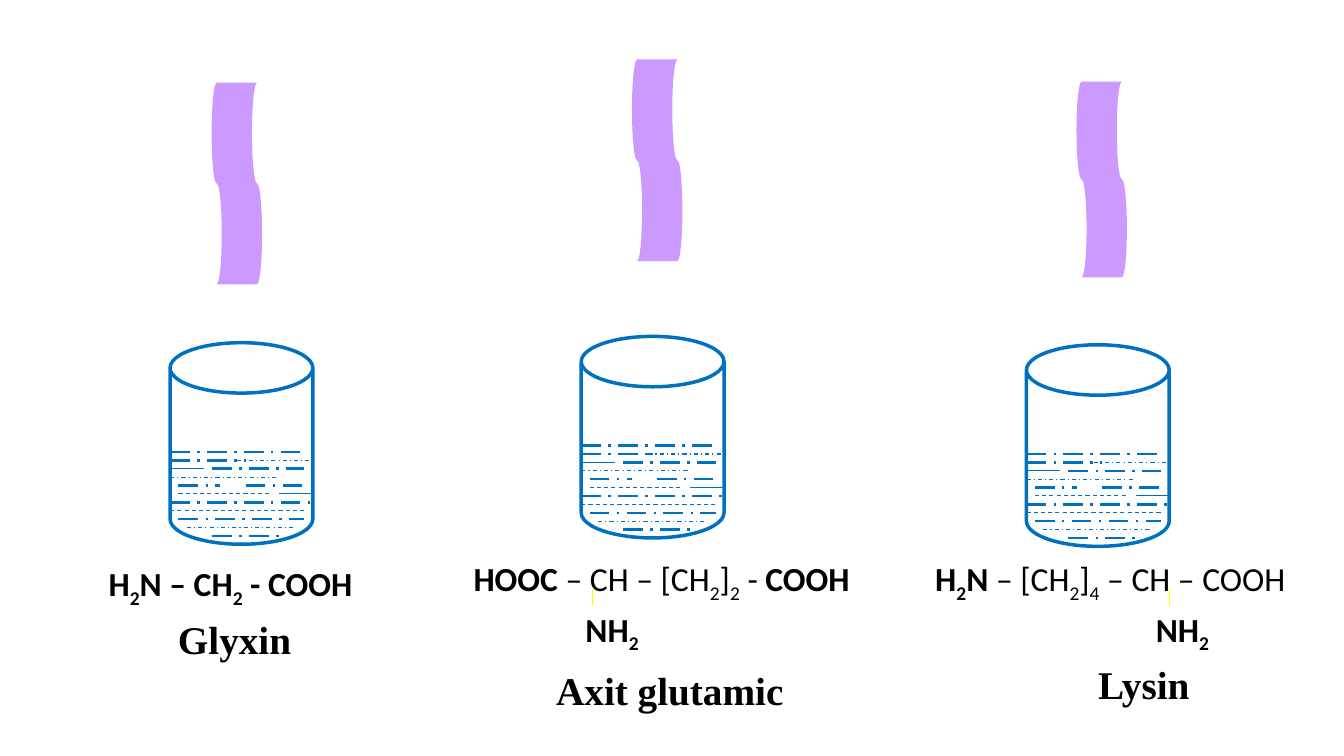
from lxml import etree
from pptx import Presentation
from pptx.dml.color import RGBColor
from pptx.enum.dml import MSO_LINE
from pptx.enum.shapes import MSO_CONNECTOR, MSO_SHAPE
from pptx.enum.text import MSO_ANCHOR, PP_ALIGN
from pptx.oxml.ns import qn
from pptx.util import Emu, Inches, Pt

STRAIGHT = MSO_CONNECTOR.STRAIGHT
CAN, TAPE = MSO_SHAPE.CAN, MSO_SHAPE.FLOWCHART_PUNCHED_TAPE
LONG_DASH_DOT, DASH, DASH_DOT = MSO_LINE.LONG_DASH_DOT, MSO_LINE.DASH, MSO_LINE.DASH_DOT
MIDDLE, CENTER, LEFT = MSO_ANCHOR.MIDDLE, PP_ALIGN.CENTER, PP_ALIGN.LEFT

CELL = Inches(7.5) // 90
SLIDE_COLS, SLIDE_ROWS = 160, 90
BEAKER_COLS, BEAKER_ROWS = 17, 24
TAPE_WIDTH = 6
BLUE, PURPLE, YELLOW, BLACK = "0070C0", "CC99FF", "FFFF00", "000000"
NAME_FONT = {"name": "Times New Roman", "size": Pt(28), "bold": True}
FORMULA_FONT = {"name": "Calibri", "size": Pt(24)}

THICK = (1.75, LONG_DASH_DOT)
THIN, THIN_DASH, THIN_DASH_DOT = (0.75, None), (0.75, DASH), (0.75, DASH_DOT)
LIQUID = {
    THICK: [(13, 0, 16), (14, 0, 9), (15, 5, 16), (17, 1, 6), (17, 9, 16),
            (19, 0, 17), (21, 1, 16), (23, 5, 13)],
    THIN: [(15, 0, 4), (18, 13, 17)],
    THIN_DASH: [(18, 1, 12), (20, 0, 16)],
    THIN_DASH_DOT: [(16, 0, 13), (22, 2, 15), (14, 8, 17)],
}

AMINO = [("NH", True), ("2", True)]
SAMPLES = [
    {
        "tape": (28.2, 21.84, 24),
        "beaker": (20.25, 40.8),
        "formula": (11.76, 66.72, 41),
        "pieces": [("H", True), ("2", True), ("N – CH", True), ("2", True),
                   (" - COOH", True)],
        "branch": None,
        "name": ("Glyxin", 16.92, 72.6, 22),
    },
    {
        "tape": (78.24, 19.08, 24),
        "beaker": (69.2, 40.05),
        "formula": (55.2, 66.12, 48),
        "pieces": [("HOOC", True), (" – CH – [CH", False), ("2", False), ("]", False),
                   ("2", False), (" - ", False), ("COOH", True)],
        "branch": (15.36, 13.32),
        "name": ("Axit glutamic", 63.24, 78.6, 33),
    },
    {
        "tape": (131.16, 21.36, 23.3),
        "beaker": (122.2, 41.05),
        "formula": (110.16, 66.12, 48),
        "pieces": [("H", True), ("2", True), ("N", True), (" – [CH", False),
                   ("2", False), ("]", False), ("4", False), (" – CH – COOH", False)],
        "branch": (29.04, 26.26),
        "name": ("Lysin", 125.16, 77.88, 22),
    },
]


def cells(*counts):
    return [Emu(round(count * CELL)) for count in counts]


def color(hex_code):
    return RGBColor.from_string(hex_code)


def set_font(run, **values):
    for attribute, value in values.items():
        setattr(run.font, attribute, value)
    run.font.color.rgb = color(BLACK)


def add_line(shapes, start, end, hex_code, width, dash=None):
    line = shapes.add_connector(STRAIGHT, *cells(*start, *end))
    line.line.color.rgb = color(hex_code)
    line.line.width = Pt(width)
    if dash:
        line.line.dash_style = dash
    etree.SubElement(line._element.spPr, qn("a:effectLst"))


def add_label(shapes, left, top, width, height, wrap, align):
    label = shapes.add_textbox(*cells(left, top, width, height))
    frame = label.text_frame
    frame.word_wrap = wrap
    frame.vertical_anchor = MIDDLE
    frame.paragraphs[0].alignment = align
    return frame.paragraphs[0]


def add_tape(shapes, center_x, center_y, length):
    tape = shapes.add_shape(TAPE, *cells(center_x - length / 2, center_y - TAPE_WIDTH / 2,
                                         length, TAPE_WIDTH))
    tape.rotation = 270
    tape.shadow.inherit = False
    tape.fill.solid()
    tape.fill.fore_color.rgb = color(PURPLE)
    tape.line.fill.background()


def add_beaker(shapes, left, top):
    beaker = shapes.add_group_shape().shapes
    glass = beaker.add_shape(CAN, *cells(left, top, BEAKER_COLS, BEAKER_ROWS))
    glass.adjustments[0] = 0.353
    glass.shadow.inherit = False
    glass.fill.background()
    glass.line.color.rgb = color(BLUE)
    glass.line.width = Pt(2.5)
    for (width, dash), strokes in LIQUID.items():
        for row, first, last in strokes:
            add_line(beaker, (left + first, top + row), (left + last, top + row),
                     BLUE, width, dash)


def add_formula(shapes, left, top, width, pieces):
    paragraph = add_label(shapes, left, top, width, 6.1, True, LEFT)
    for text, bold in pieces:
        run = paragraph.add_run()
        run.text = text
        set_font(run, **FORMULA_FONT, bold=bold)
        if text.isdigit():
            run._r.get_or_add_rPr().set("baseline", "-25000")


def add_branch(shapes, left, top, bond, amino):
    add_formula(shapes, left + amino, top + 6, 12, AMINO)
    add_line(shapes, (left + bond, top + 4), (left + bond, top + 6), YELLOW, 0.75)


def add_name(shapes, text, left, top, width):
    run = add_label(shapes, left, top, width, 7, False, CENTER).add_run()
    run.text = text
    set_font(run, **NAME_FONT)


def add_sample(shapes, sample):
    left, top, width = sample["formula"]
    add_tape(shapes, *sample["tape"])
    add_beaker(shapes, *sample["beaker"])
    add_formula(shapes, left, top, width, sample["pieces"])
    if sample["branch"]:
        add_branch(shapes, left, top, *sample["branch"])
    add_name(shapes, *sample["name"])


def main():
    deck = Presentation()
    deck.slide_width, deck.slide_height = cells(SLIDE_COLS, SLIDE_ROWS)
    slide = deck.slides.add_slide(deck.slide_layouts[6])
    for sample in SAMPLES:
        add_sample(slide.shapes, sample)
    deck.save("out.pptx")


if __name__ == "__main__":
    main()
